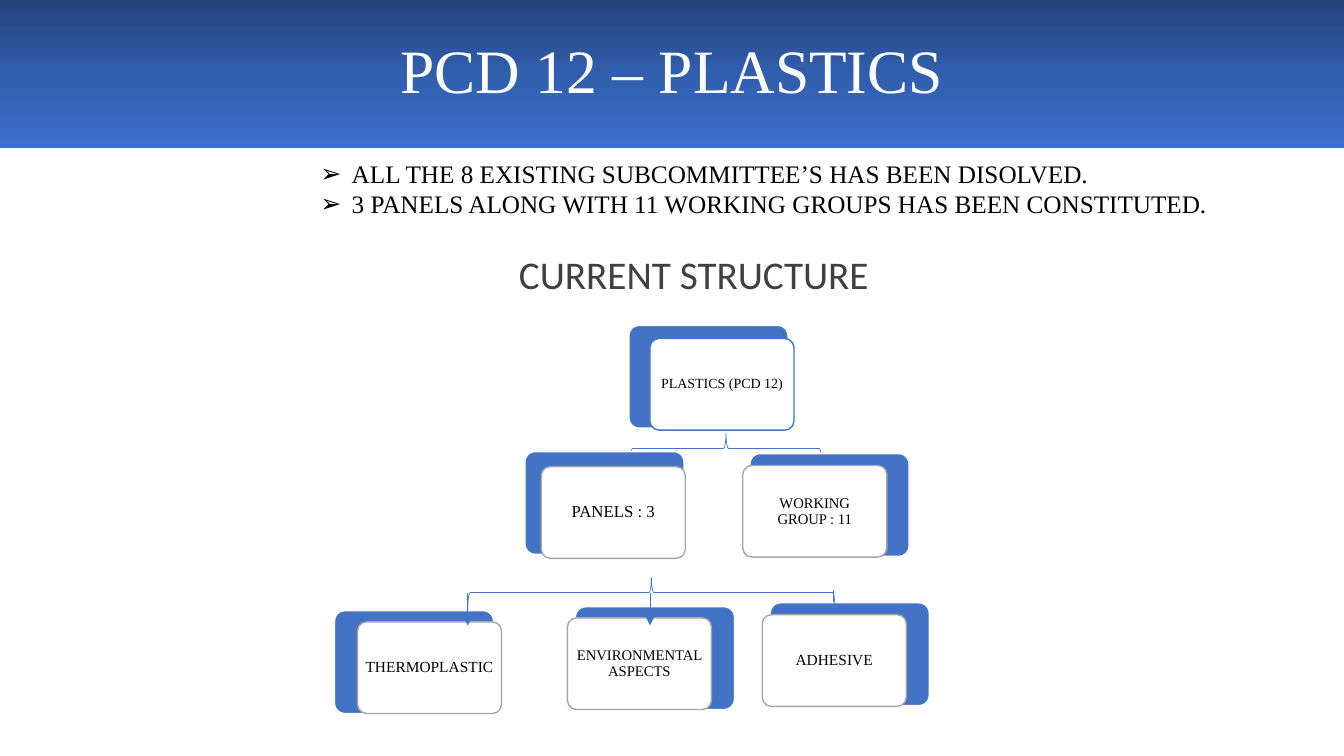
from lxml.etree import SubElement
from pptx import Presentation
from pptx.dml.color import RGBColor
from pptx.enum.shapes import MSO_CONNECTOR, MSO_SHAPE
from pptx.enum.text import MSO_ANCHOR, MSO_AUTO_SIZE, PP_ALIGN
from pptx.oxml.ns import qn
from pptx.util import Cm, Pt

COLORS = {
    "banner_top": "23427A",
    "banner_middle": "315EAD",
    "banner_bottom": "3A6FCE",
    "blue": "4472C4",
    "gray": "A5A5A5",
    "heading": "404040",
    "white": "FFFFFF",
    "black": "000000",
}
SERIF = "Times New Roman"
BACK_SIZE = (4.01, 2.59)
FRONT_SIZE = (3.63, 2.31)
NARROW_MARGIN = 0.08
WIDE_MARGIN = 0.3

CARDS = [
    ("PLASTICS (PCD 12)", 10, "blue", (15.85, 8.2), (0.53, 0.33), NARROW_MARGIN),
    ("PANELS : 3", 12, "gray", (13.23, 11.38), (0.41, 0.38), NARROW_MARGIN),
    ("WORKING GROUP : 11", 10.5, "gray", (18.9, 11.43), (-0.18, 0.3), WIDE_MARGIN),
    ("THERMOPLASTIC", 11, "gray", (8.43, 15.39), (0.58, 0.28), NARROW_MARGIN),
    ("ADHESIVE", 11, "gray", (19.41, 15.19), (-0.2, 0.3), NARROW_MARGIN),
    ("ENVIRONMENTAL ASPECTS", 10.5, "gray", (14.5, 15.29), (-0.2, 0.28), NARROW_MARGIN),
]


def color(name):
    return RGBColor.from_string(COLORS[name])


def place(shape, left, top, width, height):
    shape.left, shape.top = Cm(left), Cm(top)
    shape.width, shape.height = Cm(width), Cm(height)


def style_font(paragraph, size, name, color_name):
    paragraph.font.size = Pt(size)
    paragraph.font.name = name
    paragraph.font.color.rgb = color(color_name)


def add_banner(slide, box):
    title = slide.shapes.title
    place(title, *box)
    gradient = SubElement(title._element.spPr, qn("a:gradFill"), rotWithShape="1")
    stops = SubElement(gradient, qn("a:gsLst"))
    for percent, name in ((0, "banner_top"), (50, "banner_middle"), (100, "banner_bottom")):
        stop = SubElement(stops, qn("a:gs"), pos=str(percent * 1000))
        SubElement(stop, qn("a:srgbClr"), val=COLORS[name])
    SubElement(gradient, qn("a:lin"), ang="5400000", scaled="0")
    title.text_frame.text = "PCD 12 – PLASTICS"
    title.text_frame.auto_size = MSO_AUTO_SIZE.NONE
    title.text_frame.vertical_anchor = MSO_ANCHOR.MIDDLE
    paragraph = title.text_frame.paragraphs[0]
    paragraph.alignment = PP_ALIGN.CENTER
    paragraph.line_spacing = 0.9
    style_font(paragraph, 44, SERIF, "white")


def add_bullets(slide, box, lines):
    body = slide.placeholders[1]
    place(body, *box)
    frame = body.text_frame
    frame.text = "\n".join(lines)
    frame.auto_size = MSO_AUTO_SIZE.NONE
    for paragraph in frame.paragraphs:
        properties = paragraph._p.get_or_add_pPr()
        properties.set("marL", str(Cm(0.79)))
        properties.set("indent", str(-Cm(0.79)))
        SubElement(properties, qn("a:buFont"), typeface="Arial")
        SubElement(properties, qn("a:buChar"), char="➢")
        paragraph.space_before = Pt(0)
        style_font(paragraph, 18, SERIF, "black")


def add_heading(slide, box, text):
    heading = slide.shapes.add_textbox(*map(Cm, box))
    frame = heading.text_frame
    frame.word_wrap = True
    frame.vertical_anchor = MSO_ANCHOR.BOTTOM
    frame.text = text
    style_font(frame.paragraphs[0], 28, "Calibri", "heading")


def add_panel(slide, box, fill, line):
    panel = slide.shapes.add_shape(MSO_SHAPE.ROUNDED_RECTANGLE, *map(Cm, box))
    panel.adjustments[0] = 0.1
    panel.shadow.inherit = False
    panel.fill.solid()
    panel.fill.fore_color.rgb = color(fill)
    panel.line.color.rgb = color(line)
    panel.line.width = Pt(1)
    return panel


def add_card(slide, text, size, outline, corner, offset, margin):
    left, top = corner
    add_panel(slide, (left, top, *BACK_SIZE), "blue", "white")
    front = add_panel(slide, (left + offset[0], top + offset[1], *FRONT_SIZE), "white", outline)
    frame = front.text_frame
    frame.word_wrap = True
    frame.margin_left = frame.margin_right = Cm(margin)
    frame.margin_top = frame.margin_bottom = Cm(0.1)
    frame.vertical_anchor = MSO_ANCHOR.MIDDLE
    frame.text = text
    paragraph = frame.paragraphs[0]
    paragraph.alignment = PP_ALIGN.CENTER
    paragraph.line_spacing = 0.9
    style_font(paragraph, size, SERIF, "black")


def add_brace(slide, box):
    left, top, span, depth = box
    inset = (span - depth) / 2
    brace = slide.shapes.add_shape(
        MSO_SHAPE.LEFT_BRACE, Cm(left + inset), Cm(top - inset), Cm(depth), Cm(span))
    brace.rotation = 90
    brace.shadow.inherit = False
    brace.fill.background()
    brace.line.color.rgb = color("blue")
    brace.line.width = Pt(0.5)


def add_arrow(slide, x, top, length):
    arrow = slide.shapes.add_connector(
        MSO_CONNECTOR.STRAIGHT, Cm(x), Cm(top), Cm(x), Cm(top + length))
    arrow.line.color.rgb = color("blue")
    arrow.line.width = Pt(0.5)
    SubElement(arrow.line._get_or_add_ln(), qn("a:tailEnd"), type="triangle")
    SubElement(arrow._element.spPr, qn("a:effectLst"))


def add_structure(slide):
    add_arrow(slide, 21.01, 14.86, 0.81)
    add_brace(slide, (15.88, 10.92, 4.83, 0.76))
    for card in CARDS:
        add_card(slide, *card)
    add_brace(slide, (11.79, 14.55, 9.25, 0.76))
    for x in (16.38, 11.79):
        add_arrow(slide, x, 14.94, 0.82)


def main():
    presentation = Presentation()
    presentation.slide_width, presentation.slide_height = Cm(33.87), Cm(19.05)
    slide = presentation.slides.add_slide(presentation.slide_layouts[1])
    add_banner(slide, (0, 0, 33.87, 3.73))
    add_bullets(slide, (7.82, 3.86, 22.89, 1.8), [
        "ALL THE 8 EXISTING SUBCOMMITTEE’S HAS BEEN DISOLVED.",
        "3 PANELS ALONG WITH 11 WORKING GROUPS HAS BEEN CONSTITUTED.",
    ])
    add_heading(slide, (12.83, 5.92, 11.28, 1.7), "CURRENT STRUCTURE")
    add_structure(slide)
    presentation.save("out.pptx")


if __name__ == "__main__":
    main()
